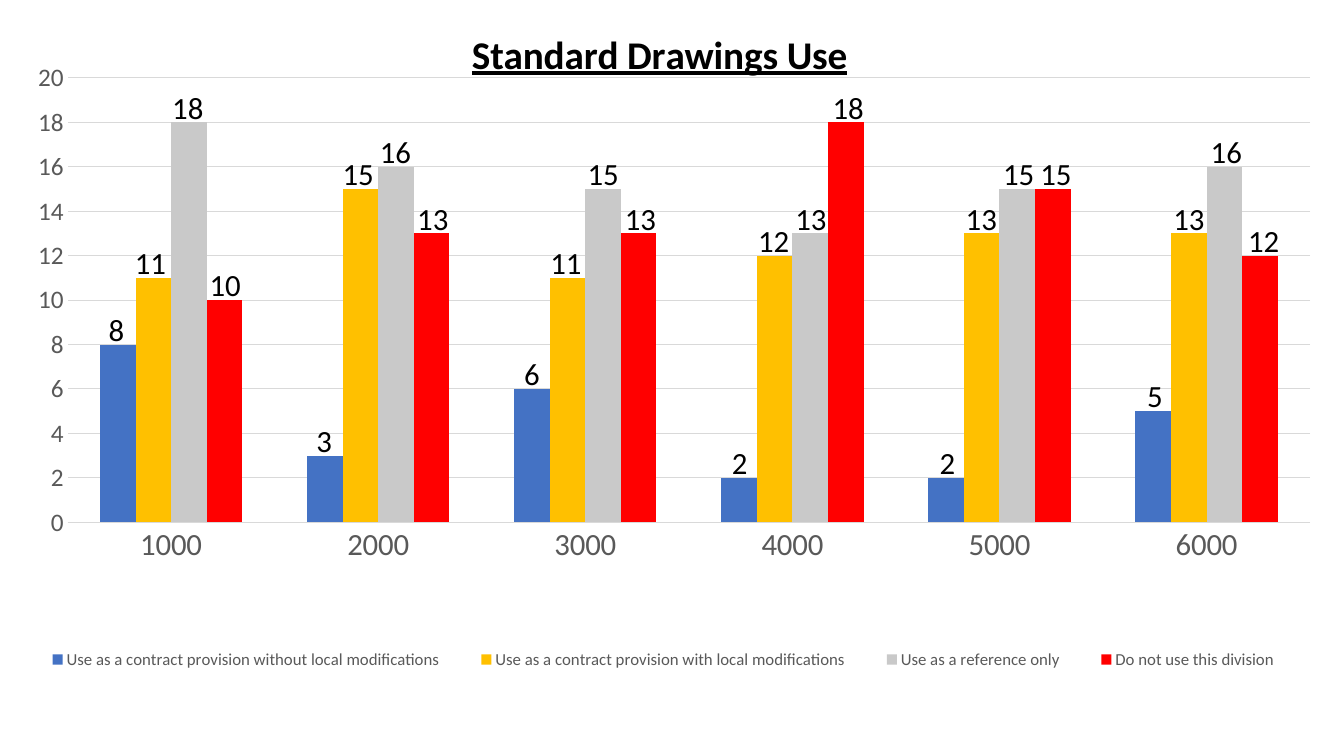
"""Build the slide with the Standard Drawings Use column chart."""
from lxml import etree
from pptx import Presentation
from pptx.chart.data import CategoryChartData
from pptx.dml.color import RGBColor
from pptx.enum.chart import XL_CHART_TYPE, XL_LEGEND_POSITION, XL_TICK_MARK
from pptx.enum.text import MSO_AUTO_SIZE
from pptx.oxml.ns import qn
from pptx.util import Inches, Pt

COLUMN = XL_CHART_TYPE.COLUMN_CLUSTERED
BOTTOM = XL_LEGEND_POSITION.BOTTOM
NO_TICK = XL_TICK_MARK.NONE
FIT_SHAPE = MSO_AUTO_SIZE.SHAPE_TO_FIT_TEXT

BLACK = RGBColor(0x00, 0x00, 0x00)
GRAY = RGBColor(0x59, 0x59, 0x59)
GRID = RGBColor(0xD9, 0xD9, 0xD9)
BLUE = RGBColor(0x44, 0x72, 0xC4)
GOLD = RGBColor(0xFF, 0xC0, 0x00)
SILVER = RGBColor(0xC9, 0xC9, 0xC9)
RED = RGBColor(0xFF, 0x00, 0x00)

FONT = "Calibri"
DIVISIONS = ["1000", "2000", "3000", "4000", "5000", "6000"]
SERIES = [
    ("Use as a contract provision without local modifications", BLUE, [8, 3, 6, 2, 2, 5]),
    ("Use as a contract provision with local modifications", GOLD, [11, 15, 11, 12, 13, 13]),
    ("Use as a reference only", SILVER, [18, 16, 15, 13, 15, 16]),
    ("Do not use this division", RED, [10, 13, 13, 18, 15, 12]),
]

GROUP_PITCH = 2.06
LABEL_LEFTS = [0.98, 1.24, 1.61, 1.98]
LABEL_BASE = 4.79
UNIT_HEIGHT = 0.22
LABEL_WIDTH, LABEL_HEIGHT = 0.54, 0.47


def set_font(font, size, color, bold=False):
    """Apply the slide's typeface with a size, colour and weight."""
    font.name = FONT
    font.size = Pt(size)
    font.color.rgb = color
    font.bold = bold


def set_layout(element, index, **settings):
    """Give a chart part a manual layout at its place among the children."""
    for old in element.findall(qn("c:layout")):
        element.remove(old)
    layout = etree.Element(qn("c:layout"))
    manual = etree.SubElement(layout, qn("c:manualLayout"))
    for name, value in settings.items():
        etree.SubElement(manual, qn("c:" + name)).set("val", str(value))
    element.insert(index, layout)


def style_axis(axis, size):
    """Style an axis without tick marks."""
    axis.major_tick_mark = axis.minor_tick_mark = NO_TICK
    set_font(axis.tick_labels.font, size, GRAY)


def style_line(line):
    """Apply the thin light line of the axis and grid."""
    line.color.rgb = GRID
    line.width = Pt(0.75)


def add_title(chart):
    """Add the underlined chart title."""
    chart.has_title = True
    title = chart.chart_title
    title.include_in_layout = False
    p = title.text_frame.paragraphs[0]
    r = p.add_run()
    r.text = "Standard Drawings Use"
    set_font(r.font, 28, BLACK, True)
    r.font.underline = True
    set_layout(title._element, 1, xMode="edge", yMode="edge", x=0.348, y=0.009)


def add_legend(chart):
    """Add the legend across the foot of the chart."""
    chart.has_legend = True
    legend = chart.legend
    legend.position = BOTTOM
    legend.include_in_layout = False
    set_font(legend.font, 12, GRAY)
    set_layout(legend._element, 1, xMode="edge", yMode="edge",
               x=0.005, y=0.84, w=0.99, h=0.06)


def add_columns(s):
    """Add the clustered column chart."""
    data = CategoryChartData()
    data.categories = DIVISIONS
    for name, _, values in SERIES:
        data.add_series(name, values)
    chart = s.shapes.add_chart(COLUMN, Inches(0.1), Inches(0.14),
                               Inches(12.96), Inches(7.36), data).chart
    set_font(chart.font, 10, BLACK)
    add_title(chart)
    add_legend(chart)

    plot = chart.plots[0]
    plot.gap_width = 182
    plot.overlap = 0
    plot.vary_by_categories = False
    for series, (_, color, _) in zip(plot.series, SERIES):
        series.format.fill.solid()
        series.format.fill.fore_color.rgb = color

    style_axis(chart.category_axis, 22)
    style_line(chart.category_axis.format.line)
    axis = chart.value_axis
    style_axis(axis, 18)
    axis.minimum_scale, axis.maximum_scale, axis.major_unit = 0, 20, 2
    axis.format.line.fill.background()
    axis.has_major_gridlines = True
    style_line(axis.major_gridlines.format.line)
    set_layout(chart._chartSpace.chart.plotArea, 0, layoutTarget="inner",
               xMode="edge", yMode="edge", x=0.044, y=0.086, w=0.951, h=0.599)


def add_value(s, left, value):
    """Write a value above its column."""
    top = LABEL_BASE - UNIT_HEIGHT * value
    sp = s.shapes.add_textbox(Inches(left), Inches(top),
                              Inches(LABEL_WIDTH), Inches(LABEL_HEIGHT))
    tf = sp.text_frame
    tf.word_wrap = True
    tf.auto_size = FIT_SHAPE
    p = tf.paragraphs[0]
    p.text = str(value)
    set_font(p.font, 22, BLACK)


def main():
    """Build and save the slide."""
    prs = Presentation()
    prs.slide_width, prs.slide_height = Inches(13.33), Inches(7.5)
    s = prs.slides.add_slide(prs.slide_layouts[6])
    add_columns(s)
    for left, (_, _, values) in zip(LABEL_LEFTS, SERIES):
        for group, value in enumerate(values):
            add_value(s, left + group * GROUP_PITCH, value)
    prs.save("out.pptx")


if __name__ == "__main__":
    main()
